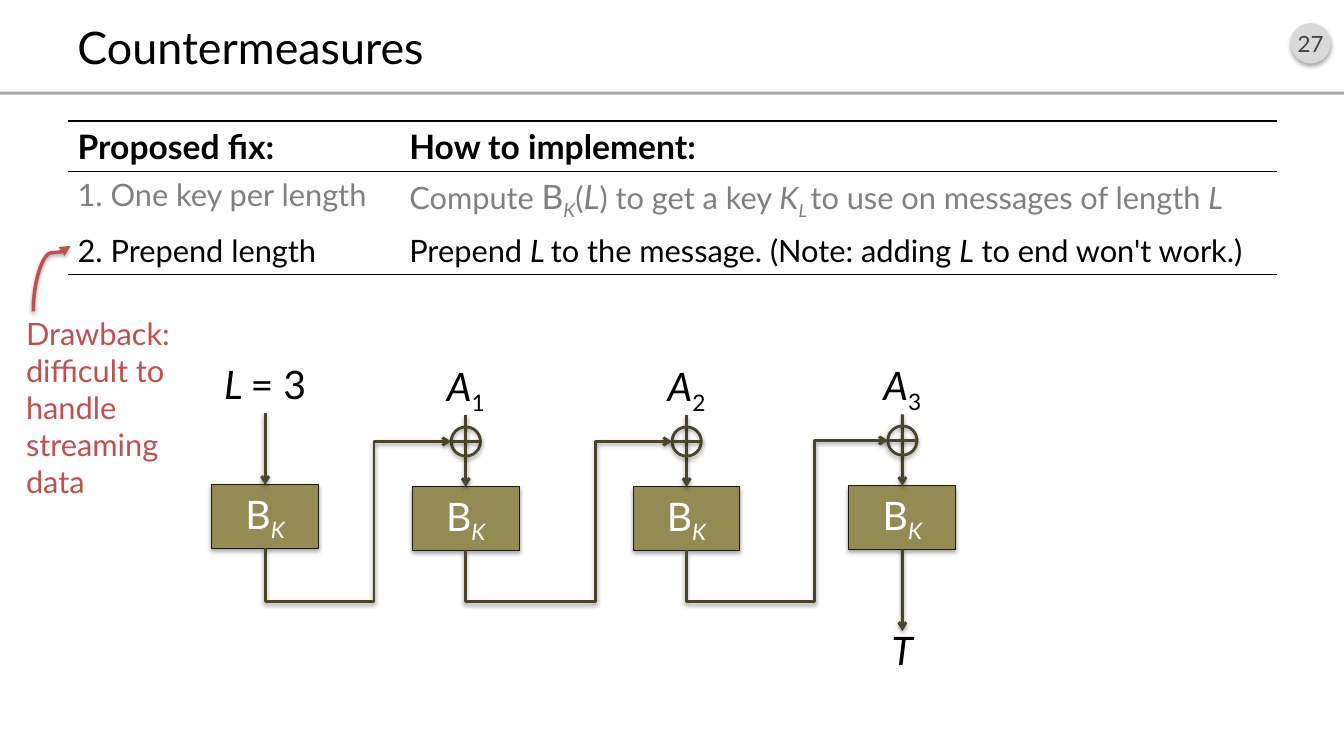
from lxml import etree
from pptx import Presentation
from pptx.dml.color import RGBColor
from pptx.enum.shapes import MSO_CONNECTOR, MSO_SHAPE
from pptx.enum.text import MSO_ANCHOR, PP_ALIGN
from pptx.oxml.ns import qn
from pptx.util import Emu, Inches, Pt

STRAIGHT, ELBOW, CURVE = MSO_CONNECTOR.STRAIGHT, MSO_CONNECTOR.ELBOW, MSO_CONNECTOR.CURVE
RECT, OVAL = MSO_SHAPE.RECTANGLE, MSO_SHAPE.OVAL
LEFT, CENTER = PP_ALIGN.LEFT, PP_ALIGN.CENTER
TOP, MIDDLE = MSO_ANCHOR.TOP, MSO_ANCHOR.MIDDLE

FONT = "Lato"
BLACK = RGBColor(0, 0, 0)
WHITE = RGBColor(255, 255, 255)
GRAY = RGBColor(0x80, 0x80, 0x80)
RULE_GRAY = RGBColor(0xA6, 0xA6, 0xA6)
BADGE = RGBColor(0xD9, 0xD9, 0xD9)
BADGE_TEXT = RGBColor(0x40, 0x40, 0x40)
OLIVE = RGBColor(0x94, 0x8A, 0x54)
OLIVE_EDGE = RGBColor(0x1E, 0x1C, 0x11)
OLIVE_DARK = RGBColor(0x4A, 0x45, 0x2A)
RED = RGBColor(0xC0, 0x50, 0x4D)

# Content: a run is (text, style, size); styles: b bold, i italic, s subscript
TITLE = "Countermeasures"
PAGE = "27"
NOTE = ["Drawback:", "difficult to handle streaming data"]
TABLE = [
    (BLACK, [[("Proposed fix:", "b", 24)], [("How to implement:", "b", 24)]]),
    (GRAY, [[("1. One key per length", "", 22)],
            [("Compute ", "", 22), ("B", "", 24), ("K", "is", 24), ("(", "", 22),
             ("L", "i", 24), (") to get a key ", "", 22), ("K", "i", 22),
             ("L ", "is", 22), ("to use on messages of length ", "", 22),
             ("L", "i", 22)]]),
    (BLACK, [[("2. Prepend length", "", 22)],
             [("Prepend ", "", 22), ("L ", "i", 22),
              ("to the message. (Note: adding ", "", 22), ("L", "i", 22),
              (" to end won't work.)", "", 22)]]),
]
COL_WIDTHS = [3.29, 8.71]
CIPHER = [("B", "", 28), ("K", "is", 28)]
# Each block: input label, centre x, box top, x where the chaining line rises
BLOCKS = [
    ([("L ", "i", 28), ("= 3", "", 28)], 2.63, 4.81, None),
    ([("A", "i", 28), ("1", "s", 28)], 4.62, 4.83, 3.71),
    ([("A", "i", 28), ("2", "s", 28)], 6.81, 4.83, 5.91),
    ([("A", "i", 28), ("3", "s", 28)], 8.95, 4.82, 8.08),
]
BOX_W, BOX_H = 1.06, 0.63
LABEL_W, LABEL_H = 1.54, 0.57
XOR_D, XOR_RISE = 0.29, 0.45
ARROW_LEN, LABEL_RISE = 0.71, 1.28
CHAIN_Y = 5.97

prs = Presentation()
prs.slide_width, prs.slide_height = Inches(13.33), Inches(7.5)
slide = prs.slides.add_slide(prs.slide_layouts[6])
shapes = slide.shapes


def add_runs(p, runs, color):
    for text, style, size in runs:
        r = p.add_run()
        r.text = text
        r.font.name, r.font.size = FONT, Pt(size)
        r.font.bold, r.font.italic = "b" in style, "i" in style
        r.font.color.rgb = color
        if "s" in style:
            r.font._element.set("baseline", "-25000")


def write(sp, runs, color, align=CENTER, anchor=MIDDLE):
    tf = sp.text_frame
    tf.word_wrap, tf.vertical_anchor = True, anchor
    p = tf.paragraphs[0]
    p.alignment = align
    add_runs(p, runs, color)
    return p


def add_text(x, y, w, h, runs, color, align=CENTER, anchor=TOP):
    sp = shapes.add_textbox(Inches(x), Inches(y), Inches(w), Inches(h))
    return write(sp, runs, color, align, anchor)


def cast_shadow(effects, dist, alpha):
    shadow = etree.SubElement(effects, qn("a:outerShdw"), blurRad="40000",
                              dist=str(dist), dir="5400000", rotWithShape="0")
    black = etree.SubElement(shadow, qn("a:srgbClr"), val="000000")
    etree.SubElement(black, qn("a:alpha"), val=str(alpha))


def add_shape(kind, x, y, w, h, fill=None, line=None, width=0.75, shadow=True):
    sp = shapes.add_shape(kind, Inches(x), Inches(y), Inches(w), Inches(h))
    if fill is None:
        sp.fill.background()
    else:
        sp.fill.solid()
        sp.fill.fore_color.rgb = fill
    if line is None:
        sp.line.fill.background()
    else:
        sp.line.color.rgb, sp.line.width = line, Pt(width)
    sp.shadow.inherit = False
    if shadow:
        cast_shadow(sp._element.spPr.find(qn("a:effectLst")), 23000, 35000)
    return sp


def add_line(x1, y1, x2, y2, head=None, kind=STRAIGHT, color=OLIVE_DARK, width=2):
    cxn = shapes.add_connector(kind, Inches(x1), Inches(y1), Inches(x2), Inches(y2))
    cxn.line.color.rgb, cxn.line.width = color, Pt(width)
    if head:
        etree.SubElement(cxn.line._get_or_add_ln(), qn("a:tailEnd"), type=head)
    cast_shadow(etree.SubElement(cxn._element.spPr, qn("a:effectLst")), 20000, 38000)
    return cxn


def turn_upward(cxn, preset, *adjusts):
    """Make a rising connector leave its start vertically."""
    cx, cy = cxn.left + cxn.width // 2, cxn.top + cxn.height // 2
    w, h = cxn.height, cxn.width
    cxn.left, cxn.top = Emu(cx - w // 2), Emu(cy - h // 2)
    cxn.width, cxn.height = w, h
    spPr = cxn._element.spPr
    for name, value in (("rot", "5400000"), ("flipH", "1"), ("flipV", "1")):
        spPr.find(qn("a:xfrm")).set(name, value)
    geom = spPr.find(qn("a:prstGeom"))
    geom.set("prst", preset)
    guides = geom.find(qn("a:avLst"))
    for n, value in enumerate(adjusts, 1):
        etree.SubElement(guides, qn("a:gd"), name=f"adj{n}",
                         fmla=f"val {round(value * 100000)}")


def add_border(cell, side):
    ln = etree.Element(qn(f"a:{side}"), w=str(Pt(1)))
    fill = etree.SubElement(ln, qn("a:solidFill"))
    etree.SubElement(fill, qn("a:srgbClr"), val=str(BLACK))
    tcPr = cell._tc.get_or_add_tcPr()
    tcPr.insert(len(tcPr), ln)


# Header
badge = add_shape(OVAL, 12.8, 0.23, 0.4, 0.4, BADGE)
badge.text_frame.margin_left = badge.text_frame.margin_right = 0
write(badge, [(PAGE, "", 16)], BADGE_TEXT)
add_shape(RECT, 0, 0.91, 13.33, 0.03, RULE_GRAY, shadow=False)
add_text(0.67, 0.16, 12, 0.6, [(TITLE, "", 32)], BLACK, LEFT, MIDDLE)

# Table of fixes
frame = shapes.add_table(len(TABLE), len(COL_WIDTHS), Inches(0.67), Inches(1.2),
                         Inches(12), Inches(1.23))
table = frame.table
table.first_row = table.horz_banding = False
style_id = table._tbl.tblPr.find(qn("a:tableStyleId"))
style_id.text = "{2D5ABB26-0587-4C30-8999-92F81FD0307C}"
for col, width in zip(table.columns, COL_WIDTHS):
    col.width = Inches(width)
for i, (color, texts) in enumerate(TABLE):
    table.rows[i].height = Inches(0.41)
    for j, runs in enumerate(texts):
        cell = table.cell(i, j)
        add_runs(cell.text_frame.paragraphs[0], runs, color)
        if i == 0:
            add_border(cell, "lnT")
        if i in (0, len(TABLE) - 1):
            add_border(cell, "lnB")
        cell.fill.background()

# Cipher chain
prev = None
for label, x, top, rise_x in BLOCKS:
    box = add_shape(RECT, x - BOX_W / 2, top, BOX_W, BOX_H, OLIVE, OLIVE_EDGE)
    write(box, CIPHER, WHITE)
    add_line(x, top - ARROW_LEN, x, top, "arrow").end_connect(box, 0)
    add_text(x - LABEL_W / 2, top - LABEL_RISE, LABEL_W, LABEL_H, label, BLACK)
    if prev:
        xor_y, r = top - XOR_RISE, XOR_D / 2
        add_shape(OVAL, x - r, xor_y - r, XOR_D, XOR_D, None, OLIVE_DARK, 2)
        add_line(x - r, xor_y, x + r, xor_y)
        x1, y1 = prev
        chain = add_line(x1, y1, x - r, xor_y, "arrow", ELBOW)
        turn_upward(chain, "bentConnector4", (y1 - CHAIN_Y) / (y1 - xor_y),
                    (rise_x - x1) / (x - r - x1))
    prev = x, top + BOX_H

# Output tag below the last block
x, y = prev
add_line(x, y, x, 6.26, "arrow").begin_connect(box, 2)
add_text(x - LABEL_W / 2, 6.16, LABEL_W, LABEL_H, [("T", "i", 28)], BLACK)

# Drawback note
p = add_text(0.16, 3.07, 1.78, 1.95, [(NOTE[0], "", 22)], RED, LEFT)
p.add_line_break()
add_runs(p, [(NOTE[1], "", 22)], RED)
pointer = add_line(0.33, 3.09, 0.7, 2.44, "triangle", CURVE, RED, 2.5)
turn_upward(pointer, "curvedConnector3", 0.9)

prs.save("out.pptx")
